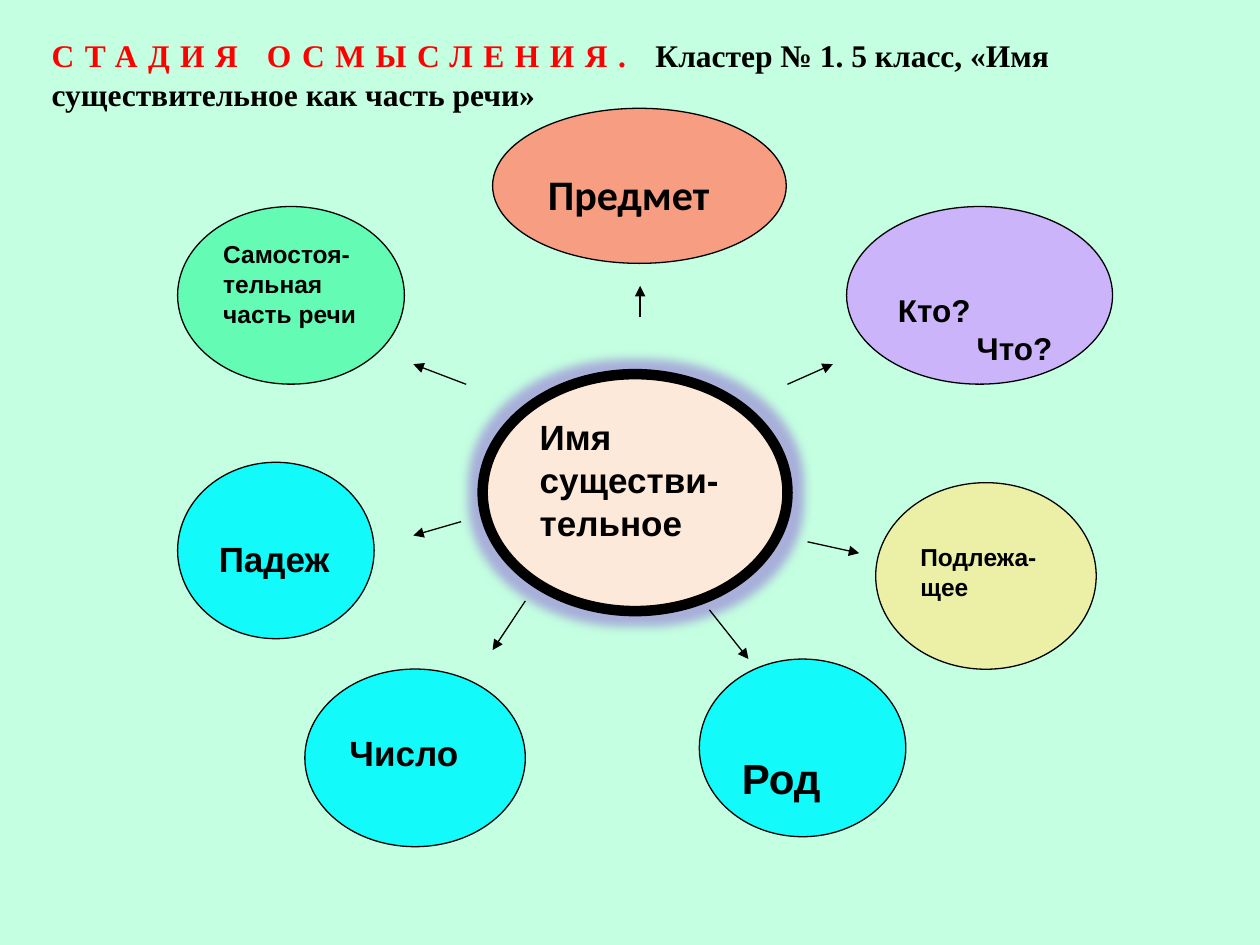
from pptx import Presentation
from pptx.dml.color import RGBColor as RGB
from pptx.enum.shapes import MSO_CONNECTOR as CONNECTOR, MSO_SHAPE as SHAPE
from pptx.enum.text import MSO_ANCHOR as ANCHOR, MSO_AUTO_SIZE as AUTO, PP_ALIGN as ALIGN
from pptx.oxml import parse_xml
from pptx.oxml.ns import nsdecls
from pptx.util import Pt

THEME = {
    "page": "C4FFE1", "ink": "000000", "accent": "FF0000", "glow": "7E38CE",
    "centre": "FDE9D9", "cyan": "12FAFA", "green": "64FCB4",
    "violet": "CBB4FA", "yellow": "EBF0A6", "salmon": "F79D81",
    "sans": "Arial", "rounded": "Calibri", "serif": "Times New Roman",
    "title": 18, "small": 14, "medium": 18, "large": 20, "huge": 24,
    "thin": 0.75, "thick": 6, "leading": 1.22,
}
INSET = 3.6

TITLE_BOX = (22.3, 16.6, 675.4, 51)
# text, colour, letter spacing in hundredths of a point
TITLE = [
    ("СТАДИЯ ОСМЫСЛЕНИЯ. ", "accent", 600),
    ("Кластер № 1. 5 класс, «Имя существительное как часть речи»", "ink", 0),
]

CENTRE = ("Имя\nсуществи-тельное", (275.8, 213.8, 174.2, 135.4), "centre", "large", "sans", 0)
# text, (left, top, width, height), fill, size, font, drop of the text
NODES = [
    ("Род", (399.6, 376.6, 118, 101.5), "cyan", "huge", "sans", 34.2),
    ("Самостоя-тельная часть речи", (101.5, 118, 129.6, 101.5), "green", "small", "sans", 0),
    ("Кто?\nЧто?", (483.8, 118, 152, 101.5), "violet", "medium", "sans", 29.3),
    ("Падеж", (101.5, 264.2, 112.3, 100.8), "cyan", "large", "sans", 24.4),
    ("Число", (174.2, 382.3, 126, 101.5), "cyan", "large", "sans", 17.1),
    ("Подлежа-щее", (500.4, 275.8, 126, 106.6), "yellow", "small", "sans", 14.6),
    ("Предмет", (281.5, 61.9, 167.8, 88.6), "salmon", "huge", "rounded", 17.1),
]
SECOND_LINE_INDENT = {"Что?": 45}

# start x, start y, end x, end y
ARROWS = [
    (266.4, 219.6, 236.2, 208.1),
    (365.8, 181.4, 365.8, 163.4),
    (450, 219.6, 475.9, 208.1),
    (263.5, 298.1, 236.2, 306),
    (300.2, 343.4, 281.5, 371.5),
    (461.5, 309.6, 491, 316.1),
    (405.4, 348.5, 427.7, 376.6),
]


def colour(name):
    return RGB.from_string(THEME[name])


def points(values):
    return [Pt(value) for value in values]


def style(font, face, size, ink="ink"):
    font.name = THEME[face]
    font.size = Pt(THEME[size])
    font.bold = True
    font.color.rgb = colour(ink)


def set_leading(para, size):
    para.alignment = ALIGN.LEFT
    para.space_before = Pt(0)
    para.line_spacing = Pt(round(THEME[size] * THEME["leading"], 1))


def add_node(page, text, place, fill, size, face, drop, line="thin"):
    node = page.shapes.add_shape(SHAPE.OVAL, *points(place))
    node.shadow.inherit = False
    node.fill.solid()
    node.fill.fore_color.rgb = colour(fill)
    node.line.color.rgb = colour("ink")
    node.line.width = Pt(THEME[line])
    frame = node.text_frame
    frame.word_wrap = True
    frame.vertical_anchor = ANCHOR.TOP
    frame.margin_top = Pt(INSET + drop)
    frame.text = text
    for para in frame.paragraphs:
        set_leading(para, size)
        indent = SECOND_LINE_INDENT.get(para.text)
        if indent:
            para._p.get_or_add_pPr().set("marL", str(Pt(indent)))
        for span in para.runs:
            style(span.font, face, size)
    return node


def add_glow(node, radius):
    effects = node._element.spPr.find(".//{*}effectLst")
    effects.append(parse_xml(
        f'<a:glow {nsdecls("a")} rad="{Pt(radius)}"><a:srgbClr val="{THEME["glow"]}">'
        '<a:alpha val="40000"/></a:srgbClr></a:glow>'))


def add_arrow(page, ends):
    arrow = page.shapes.add_connector(CONNECTOR.STRAIGHT, *points(ends))
    arrow.line.color.rgb = colour("ink")
    arrow.line.width = Pt(THEME["thin"])
    arrow.line._get_or_add_ln().append(
        parse_xml(f'<a:tailEnd {nsdecls("a")} type="triangle"/>'))
    arrow._element.spPr.append(parse_xml(f'<a:effectLst {nsdecls("a")}/>'))


def add_title(page):
    box = page.shapes.title
    box.left, box.top, box.width, box.height = points(TITLE_BOX)
    frame = box.text_frame
    frame.word_wrap = True
    frame.auto_size = AUTO.NONE
    frame.vertical_anchor = ANCHOR.TOP
    para = frame.paragraphs[0]
    set_leading(para, "title")
    for text, ink, spacing in TITLE:
        span = para.add_run()
        span.text = text
        style(span.font, "serif", "title", ink)
        span._r.get_or_add_rPr().set("spc", str(spacing))


def main():
    deck = Presentation()
    deck.slide_width, deck.slide_height = Pt(720), Pt(540)
    page = deck.slides.add_slide(deck.slide_layouts[5])
    page.background.fill.solid()
    page.background.fill.fore_color.rgb = colour("page")

    # Heading, hub, surrounding ideas and the arrows towards them
    add_title(page)
    add_glow(add_node(page, *CENTRE, line="thick"), 11)
    for node in NODES:
        add_node(page, *node)
    for ends in ARROWS:
        add_arrow(page, ends)
    deck.save("out.pptx")


if __name__ == "__main__":
    main()
